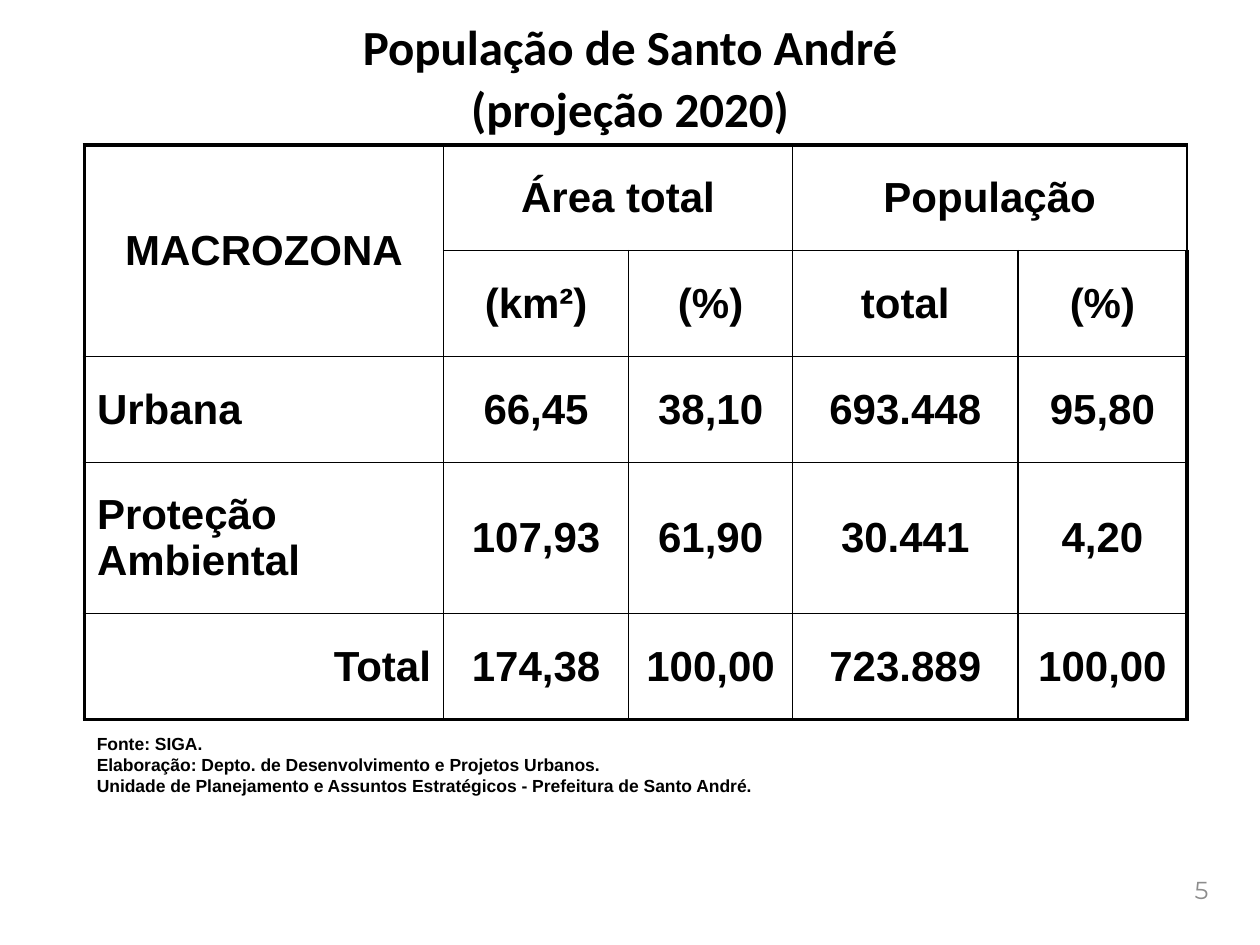
from pptx import Presentation
from pptx.dml.color import RGBColor as Rgb
from pptx.enum.text import MSO_ANCHOR as Anc, MSO_AUTO_SIZE as Fit, PP_ALIGN as Al
from pptx.oxml import parse_xml as to_xml
from pptx.oxml.ns import nsdecls as ns
from pptx.util import Inches as In, Pt

BLACK = Rgb(0, 0, 0)
GRAY = Rgb(0x8C, 0x8C, 0x8C)
COLS, ROWS = 100, 75
HEAD = ["População de Santo André", "(projeção 2020)"]
NOTES = [
    "Fonte: SIGA.",
    "Elaboração: Depto. de Desenvolvimento e Projetos Urbanos.",
    "Unidade de Planejamento e Assuntos Estratégicos - Prefeitura de Santo André.",
]
DATA = [
    ["MACROZONA", "Área total", "", "População", ""],
    ["", "(km²)", "(%)", "total", "(%)"],
    ["Urbana", "66,45", "38,10", "693.448", "95,80"],
    ["Proteção Ambiental", "107,93", "61,90", "30.441", "4,20"],
    ["Total", "174,38", "100,00", "723.889", "100,00"],
]
WIDTHS = [28.5, 14.7, 13, 17.9, 13.4]
HEIGHTS = [8.4, 8.4, 8.4, 12, 8.4]
SPANS = [(0, 0, 1, 0), (0, 1, 0, 2), (0, 3, 0, 4)]
SIDES = {(2, 0): Al.LEFT, (3, 0): Al.LEFT, (4, 0): Al.RIGHT}


class Deck:
    """Hold the style and the current slide, measured on a 100 by 75 grid."""

    def __init__(self):
        self.prs = Presentation()
        self.prs.slide_width, self.prs.slide_height = In(10), In(7.5)
        self.page = self.prs.slides.add_slide(self.prs.slide_layouts[5])

    def x(self, cols):
        return int(self.prs.slide_width * cols / COLS)

    def y(self, rows):
        return int(self.prs.slide_height * rows / ROWS)

    def box(self, x, y, w, h):
        return self.x(x), self.y(y), self.x(w), self.y(h)

    def put(self, frame, lines, size, font="Arial", color=BLACK, bold=True,
            align=Al.LEFT, gap=0, pitch=1.0):
        for i, line in enumerate(lines):
            para = frame.add_paragraph() if i else frame.paragraphs[0]
            para.alignment, para.line_spacing = align, pitch
            para.space_before = Pt(gap if i else 0)
            run = para.add_run()
            run.text = line
            run.font.size, run.font.name, run.font.bold = Pt(size), font, bold
            run.font.color.rgb = color

    def title(self, lines, *area):
        head = self.page.shapes.title
        head.left, head.top, head.width, head.height = self.box(*area)
        frame = head.text_frame
        frame.auto_size, frame.vertical_anchor = Fit.NONE, Anc.TOP
        self.put(frame, lines, 28, "Calibri", align=Al.CENTER, gap=5.6, pitch=0.9)

    def text(self, lines, size, *area, anchor=Anc.TOP, **style):
        frame = self.page.shapes.add_textbox(*self.box(*area)).text_frame
        frame.word_wrap, frame.vertical_anchor = True, anchor
        self.put(frame, lines, size, **style)

    def edge(self, cell, side, outer):
        wide = Pt(2.25 if outer else 1)
        cell._tc.get_or_add_tcPr().append(to_xml(
            f'<a:ln{side} {ns("a")} w="{wide}"><a:solidFill>'
            f'<a:srgbClr val="{BLACK}"/></a:solidFill></a:ln{side}>'))

    def table(self, data, x, y):
        last_r, last_c = len(data) - 1, len(data[0]) - 1
        area = self.box(x, y, sum(WIDTHS), sum(HEIGHTS))
        grid = self.page.shapes.add_table(len(data), len(data[0]), *area).table
        grid.first_row = grid.horz_banding = False
        for col, width in zip(grid.columns, WIDTHS):
            col.width = self.x(width)
        for row, height in zip(grid.rows, HEIGHTS):
            row.height = self.y(height)
        for top, left, low, right in SPANS:
            grid.cell(top, left).merge(grid.cell(low, right))
        for r, row in enumerate(data):
            for c, word in enumerate(row):
                cell = grid.cell(r, c)
                cell.vertical_anchor = Anc.MIDDLE
                outer = {"L": c == 0, "R": c == last_c, "T": r == 0, "B": r == last_r}
                for side, flag in outer.items():
                    self.edge(cell, side, flag)
                cell.fill.background()
                if word:
                    self.put(cell.text_frame, [word], 24,
                             align=SIDES.get((r, c), Al.CENTER))

    def save(self):
        self.prs.save("out.pptx")


def main():
    deck = Deck()
    deck.title(HEAD, 19.3, 1.3, 61.4, 9.5)
    deck.table(DATA, 6.7, 11.5)
    deck.text(NOTES, 10, 6.7, 57.7, 61.4, 6.1)
    deck.text(["5"], 14, 92.5, 68.6, 4.4, 4, anchor=Anc.MIDDLE,
              font="Montserrat", color=GRAY, bold=False, align=Al.RIGHT)
    deck.save()


if __name__ == "__main__":
    main()
